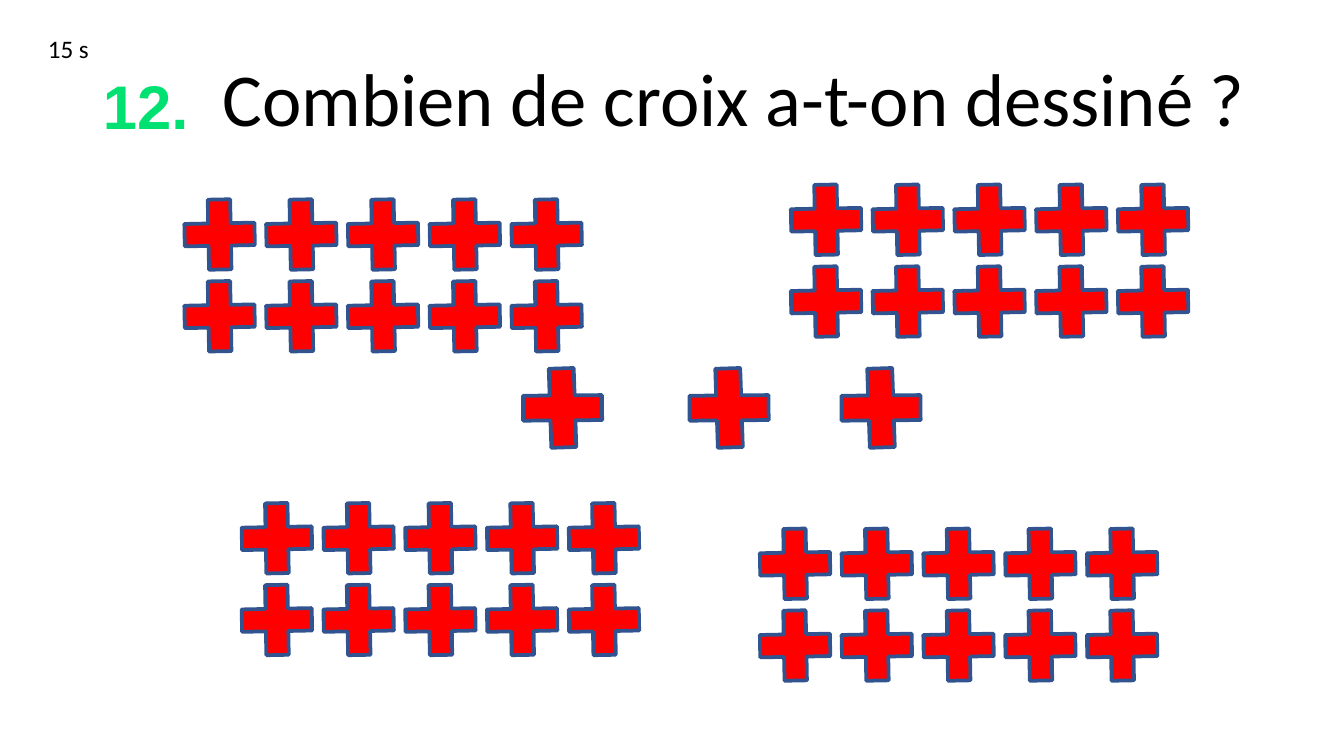
from typing import NamedTuple

from pptx import Presentation
from pptx import util as u
from pptx.dml.color import RGBColor
from pptx.enum import shapes, text

BLACK = RGBColor(0x00, 0x00, 0x00)
GREEN = RGBColor(0x00, 0xE1, 0x72)
RED = RGBColor(0xFF, 0x00, 0x00)
BLUE = RGBColor(0x31, 0x53, 0x8F)

COLUMNS, ROWS = 5, 2
PITCH = 43.8


class Label(NamedTuple):
    words: str
    left: float
    top: float
    width: float
    height: float
    size: float
    font: str = "Calibri"
    color: RGBColor = BLACK
    bold: bool = False
    anchor: text.MSO_ANCHOR = text.MSO_ANCHOR.TOP
    inset_x: float = 5.4
    inset_top: float = 2.7
    inset_bottom: float = 2.7
    line_spacing: float = 1.0


class Cross(NamedTuple):
    left: float
    top: float
    width: float = 51.1
    height: float = 51.1
    rotation: float = 43.9


class Block(NamedTuple):
    left: float
    top: float


LABELS = [
    # The deep bottom inset lifts the number level with the question
    Label("12.", 49.7, 36.7, 620.6, 77.8, 33, "Arial", GREEN, True,
          text.MSO_ANCHOR.MIDDLE, inset_bottom=37, line_spacing=0.9),
    Label("15 s", 20.2, 15.1, 34.6, 21.6, 13.5),
    Label("Combien de croix a-t-on dessiné ?", 112.3, 24.5, 600.5, 64.8, 40,
          inset_x=7.2, inset_top=3.6, inset_bottom=3.6),
]
BOTTOM_RIGHT = Block(400.4, 276.5)
OTHER_BLOCKS = [Block(92.1, 100.1), Block(417, 92.2), Block(122.8, 262.8)]
SINGLES = [Cross(left, 190.1, 58.3, 56.9, 43.8) for left in (272.2, 361.4, 442.8)]


def add_label(slide, label: Label) -> None:
    box = slide.shapes.add_textbox(
        u.Pt(label.left), u.Pt(label.top), u.Pt(label.width), u.Pt(label.height))
    frame = box.text_frame
    frame.word_wrap = True
    frame.vertical_anchor = label.anchor
    frame.margin_left = frame.margin_right = u.Pt(label.inset_x)
    frame.margin_top = u.Pt(label.inset_top)
    frame.margin_bottom = u.Pt(label.inset_bottom)
    paragraph = frame.paragraphs[0]
    paragraph.line_spacing = label.line_spacing
    run = paragraph.add_run()
    run.text = label.words
    run.font.size = u.Pt(label.size)
    run.font.name = label.font
    run.font.bold = label.bold
    run.font.color.rgb = label.color


def add_cross(parent, cross: Cross) -> None:
    shape = parent.shapes.add_shape(
        shapes.MSO_SHAPE.MATH_MULTIPLY,
        u.Pt(cross.left), u.Pt(cross.top), u.Pt(cross.width), u.Pt(cross.height))
    shape.adjustments[0] = 0.235
    shape.rotation = cross.rotation
    shape.shadow.inherit = False
    shape.fill.solid()
    shape.fill.fore_color.rgb = RED
    shape.line.color.rgb = BLUE
    shape.line.width = u.Pt(2)


def add_block(slide, block: Block) -> None:
    group = slide.shapes.add_group_shape()
    for row in range(ROWS):
        for column in range(COLUMNS):
            add_cross(group, Cross(block.left + column * PITCH, block.top + row * PITCH))


def main() -> None:
    presentation = Presentation()
    presentation.slide_width = u.Pt(720)
    presentation.slide_height = u.Pt(405)
    slide = presentation.slides.add_slide(presentation.slide_layouts[6])

    # Question number, time and question
    for label in LABELS:
        add_label(slide, label)

    # Blocks of ten, with the three single crosses in the middle
    add_block(slide, BOTTOM_RIGHT)
    for cross in SINGLES:
        add_cross(slide, cross)
    for block in OTHER_BLOCKS:
        add_block(slide, block)

    presentation.save("out.pptx")


if __name__ == "__main__":
    main()
